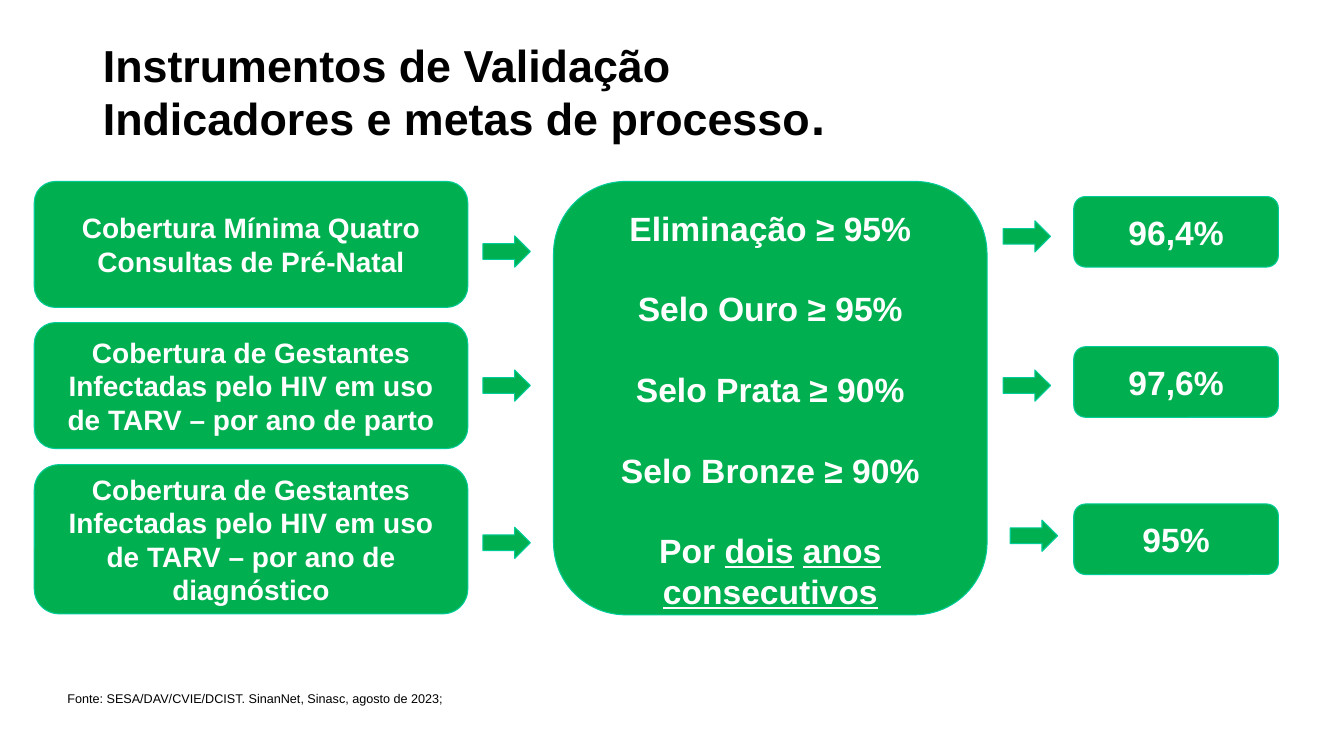
from pptx import Presentation
from pptx.dml.color import RGBColor
from pptx.enum.shapes import MSO_SHAPE
from pptx.enum.text import MSO_ANCHOR, MSO_AUTO_SIZE, PP_ALIGN
from pptx.util import Inches, Pt

COLORS = {"green": "00B050", "edge": "00CC99", "white": "FFFFFF", "black": "000000"}
FONT = "Arial"

TITLE_LINES = ["Instrumentos de Validação", "Indicadores e metas de processo"]
INDICATORS = [
    ("Cobertura Mínima Quatro Consultas de Pré-Natal", 1.8, 1.25),
    ("Cobertura de Gestantes Infectadas pelo HIV em uso de TARV – por ano de parto", 3.2, 1.25),
    ("Cobertura de Gestantes Infectadas pelo HIV em uso de TARV – por ano de diagnóstico", 4.61, 1.48),
]
TARGETS = [
    [("Eliminação ≥ 95%", False)],
    [("Selo Ouro ≥ 95%", False)],
    [("Selo Prata ≥ 90%", False)],
    [("Selo Bronze ≥ 90%", False)],
    [("Por ", False), ("dois", True), (" ", False), ("anos consecutivos", True)],
]
RESULTS = [("96,4%", 1.95), ("97,6%", 3.44), ("95%", 5)]
ARROWS = [(4.79, 2.34), (4.79, 3.67), (4.79, 5.23), (9.95, 2.19), (9.95, 3.67), (10.02, 5.16)]
SOURCE = "Fonte: SESA/DAV/CVIE/DCIST. SinanNet, Sinasc, agosto de 2023;"


def color(name):
    return RGBColor.from_string(COLORS[name])


def add_span(para, text, size, tone, bold=True, underline=False):
    span = para.add_run()
    span.text = text
    span.font.name = FONT
    span.font.size = Pt(size)
    span.font.bold = bold
    span.font.color.rgb = color(tone)
    if underline:
        span.font.underline = True


def add_green_shape(page, kind, left, top, width, height):
    shape = page.shapes.add_shape(kind, Inches(left), Inches(top), Inches(width), Inches(height))
    shape.shadow.inherit = False
    shape.fill.solid()
    shape.fill.fore_color.rgb = color("green")
    shape.line.color.rgb = color("edge")
    shape.line.width = Pt(0.75)
    return shape


def add_card(page, left, top, width, height, paragraphs, size, anchor=MSO_ANCHOR.MIDDLE):
    card = add_green_shape(page, MSO_SHAPE.ROUNDED_RECTANGLE, left, top, width, height)
    frame = card.text_frame
    frame.word_wrap = True
    frame.vertical_anchor = anchor
    for index, spans in enumerate(paragraphs):
        para = frame.add_paragraph() if index else frame.paragraphs[0]
        para.alignment = PP_ALIGN.CENTER
        if index:
            para.space_before = Pt(size * 1.2)
        for text, underline in spans:
            add_span(para, text, size, "white", underline=underline)


def add_title(page):
    title = page.shapes.title
    title.left, title.top = Inches(0.92), Inches(0.4)
    title.width, title.height = Inches(11.49), Inches(1.09)
    frame = title.text_frame
    frame.auto_size = MSO_AUTO_SIZE.NONE
    frame.word_wrap = True
    frame.vertical_anchor = MSO_ANCHOR.MIDDLE
    para = frame.paragraphs[0]
    para.alignment = PP_ALIGN.LEFT
    para.line_spacing = 0.9
    first, second = TITLE_LINES
    add_span(para, first, 32, "black")
    para.add_line_break()
    add_span(para, second, 32, "black")
    add_span(para, ".", 36, "black")


def add_source(page):
    box = page.shapes.add_textbox(Inches(0.57), Inches(6.8), Inches(6.33), Inches(0.25))
    box.text_frame.word_wrap = True
    box.text_frame.auto_size = MSO_AUTO_SIZE.SHAPE_TO_FIT_TEXT
    add_span(box.text_frame.paragraphs[0], SOURCE, 9, "black", bold=False)


def main():
    deck = Presentation()
    deck.slide_width, deck.slide_height = Inches(13.33), Inches(7.5)
    page = deck.slides.add_slide(deck.slide_layouts[5])
    add_title(page)
    for text, top, height in INDICATORS:
        add_card(page, 0.34, top, 4.3, height, [[(text, False)]], 20)
    add_card(page, 5.49, 1.8, 4.3, 4.3, TARGETS, 24, MSO_ANCHOR.TOP)
    for text, top in RESULTS:
        add_card(page, 10.65, top, 2.03, 0.7, [[(text, False)]], 24)
    for left, top in ARROWS:
        add_green_shape(page, MSO_SHAPE.RIGHT_ARROW, left, top, 0.47, 0.31)
    add_source(page)
    deck.save("out.pptx")


if __name__ == "__main__":
    main()
